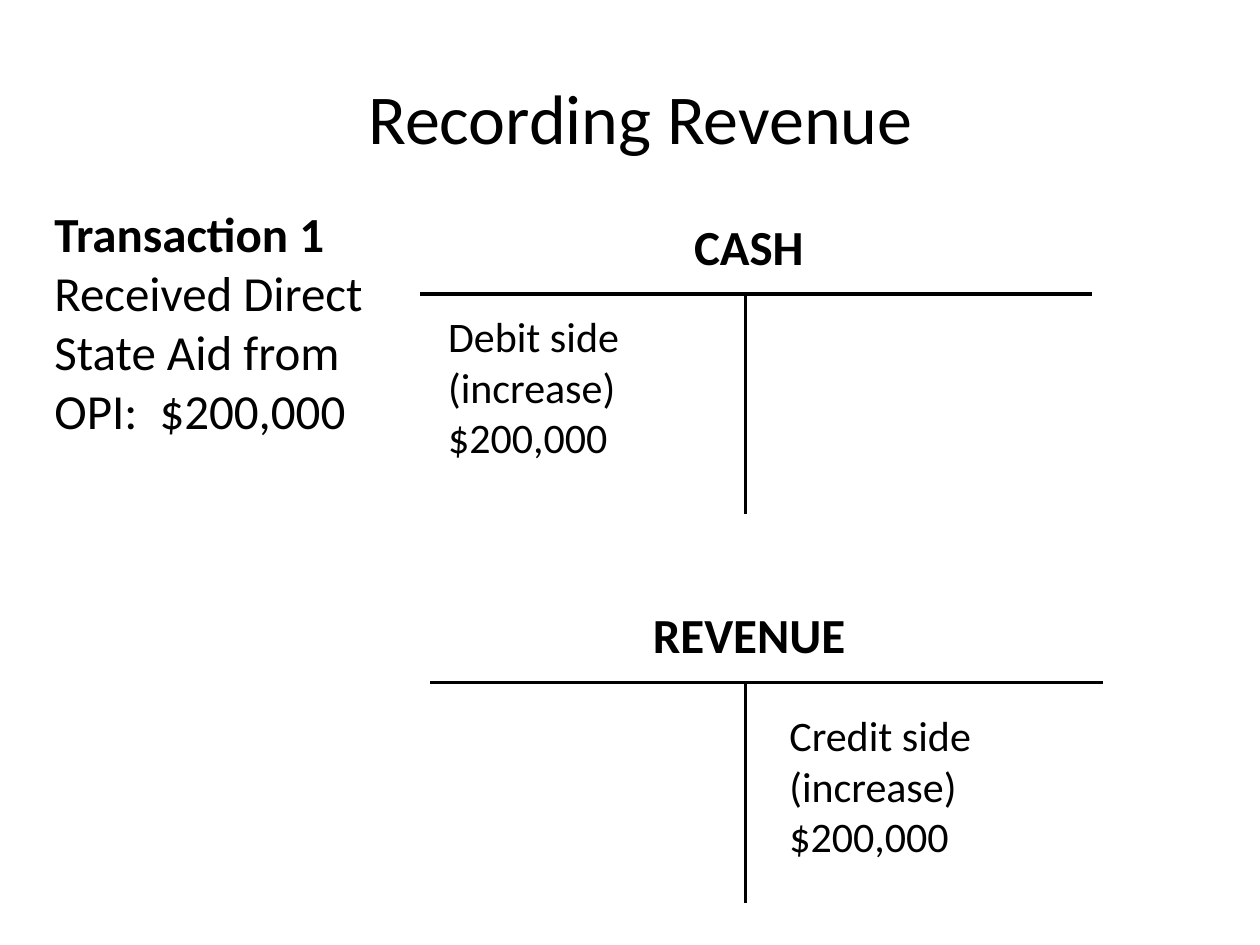
from pptx import Presentation
from pptx.dml.color import RGBColor
from pptx.enum.shapes import MSO_CONNECTOR as Conn
from pptx.enum.text import MSO_ANCHOR as Anchor, PP_ALIGN as Align
from pptx.oxml.ns import qn
from pptx.util import Pt
from lxml import etree

BLACK = RGBColor(0, 0, 0)

deck = Presentation()
deck.slide_width, deck.slide_height = Pt(720), Pt(540)
slide = deck.slides.add_slide(deck.slide_layouts[6])


def add_text(text, x, y, w, h, size, bold=False):
    box = slide.shapes.add_textbox(Pt(x), Pt(y), Pt(w), Pt(h))
    frame = box.text_frame
    frame.word_wrap = True
    frame.text = text
    for para in frame.paragraphs:
        for run in para.runs:
            font = run.font
            font.name, font.size, font.bold = "Calibri", Pt(size), bold
            font.color.rgb = BLACK
    return frame


def add_line(x1, y1, x2, y2):
    line = slide.shapes.add_connector(Conn.STRAIGHT, Pt(x1), Pt(y1), Pt(x2), Pt(y2))
    line.line.color.rgb = BLACK
    line.line.width = Pt(2)
    etree.SubElement(line._element.spPr, qn("a:effectLst"))


# Title
title = add_text("Recording Revenue", 42, 21.6, 648, 90, 40)
title.vertical_anchor = Anchor.MIDDLE
title.paragraphs[0].alignment = Align.CENTER

# T accounts: name, name left, name width, bar left, bar top, entry, entry left, entry top
STEM, BAR, DROP = 426, 384, 126
accounts = [
    ("CASH", 389.5, 84, 240, 168, "Debit side\n(increase)\n$200,000", 249, 174),
    ("REVENUE", 366, 132, 246, 390, "Credit side\n(increase)\n$200,000", 444, 402),
]
for name, left, wide, bar, top, entry, x, y in accounts:
    add_line(bar, top, bar + BAR, top)
    add_line(STEM, top, STEM, top + DROP)
    add_text(name, left, top - 48, wide, 41, 28, bold=True)
    add_text(entry, x, y, 165, 94.5, 24)

# Transaction note
note = add_text("Transaction 1\nReceived Direct State Aid from OPI:  $200,000",
                24, 113, 204, 143, 28)
note.paragraphs[0].runs[0].font.bold = True

deck.save("out.pptx")
